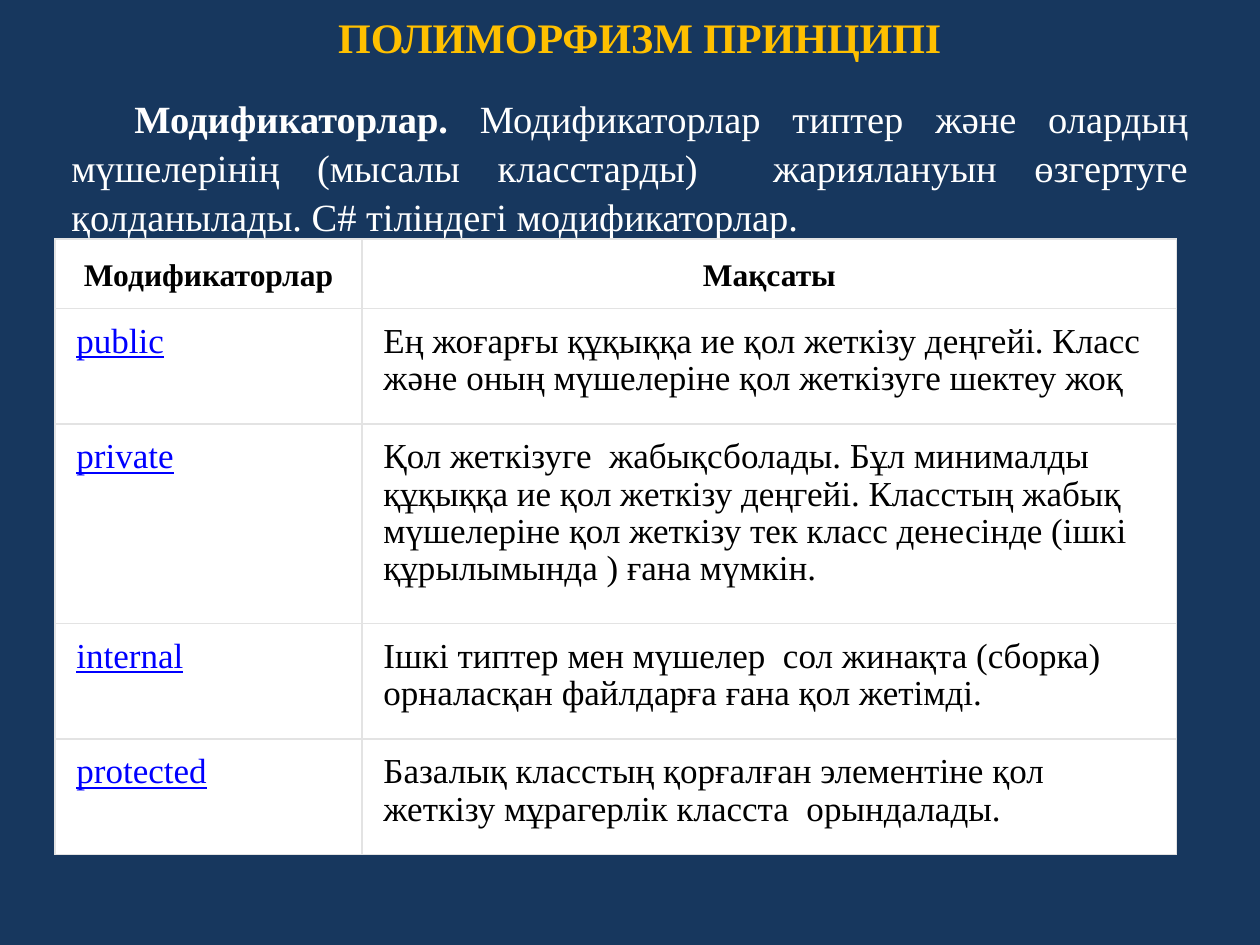
import pptx
import pptx.util
import pptx.dml.color
import pptx.enum.text
import pptx.oxml
import lxml.etree
from dataclasses import dataclass

Cm, Pt = pptx.util.Cm, pptx.util.Pt
ALIGN = pptx.enum.text.PP_ALIGN
ANCHOR = pptx.enum.text.MSO_ANCHOR


@dataclass(frozen=True)
class Theme:
    font: str = "Times New Roman"
    background: str = "17375E"
    title: str = "FFC000"
    light: str = "FFFFFF"
    dark: str = "000000"
    keyword: str = "0000FF"
    border: str = "E3E3E3"
    title_size: float = 24
    intro_size: float = 22
    header_size: float = 18
    cell_size: float = 20


THEME = Theme()


def rgb(value):
    return pptx.dml.color.RGBColor.from_string(value)


def add_text(paragraph, text, *, size, color, bold=False, underline=False,
             align=ALIGN.LEFT, spacing=None):
    paragraph.alignment = align
    if spacing:
        paragraph.line_spacing = spacing
    run = paragraph.add_run()
    run.text = text
    font = run.font
    font.name, font.size = THEME.font, Pt(size)
    font.bold, font.underline = bold, underline
    font.color.rgb = rgb(color)


class SlideBuilder:
    def __init__(self, slide, theme):
        self.slide, self.theme = slide, theme
        fill = slide.background.fill
        fill.solid()
        fill.fore_color.rgb = rgb(theme.background)

    def text_box(self, left, top, width, height, anchor=ANCHOR.TOP):
        box = self.slide.shapes.add_textbox(Cm(left), Cm(top), Cm(width), Cm(height))
        frame = box.text_frame
        frame.word_wrap = True
        frame.vertical_anchor = anchor
        return frame.paragraphs[0]

    def borders(self, cell):
        properties = cell._tc.get_or_add_tcPr()
        sides = ("lnL", "lnR", "lnT", "lnB")
        for position, side in enumerate(sides):
            line = pptx.oxml.parse_xml(
                f'<a:{side} xmlns:a="http://schemas.openxmlformats.org/drawingml/2006/main" '
                f'w="{Pt(1)}"><a:solidFill><a:srgbClr val="{self.theme.border}"/>'
                f'</a:solidFill></a:{side}>')
            properties.insert(position, line)

    def cell(self, cell, text, anchor=ANCHOR.TOP, **text_format):
        cell.margin_left = cell.margin_right = Cm(0.43)
        cell.margin_top = cell.margin_bottom = Cm(0.3)
        cell.vertical_anchor = anchor
        cell.fill.solid()
        cell.fill.fore_color.rgb = rgb(self.theme.light)
        self.borders(cell)
        add_text(cell.text_frame.paragraphs[0], text, **text_format)

    def table(self, left, top, widths, heights, header, rows):
        table = self.slide.shapes.add_table(
            len(heights), len(widths), Cm(left), Cm(top),
            Cm(sum(widths)), Cm(sum(heights))).table
        table.horz_banding = False
        for column, width in zip(table.columns, widths):
            column.width = Cm(width)
        for row, height in zip(table.rows, heights):
            row.height = Cm(height)
        for index, heading in enumerate(header):
            self.cell(table.cell(0, index), heading, ANCHOR.BOTTOM, bold=True,
                      size=self.theme.header_size, color=self.theme.dark,
                      align=ALIGN.CENTER)
        body = dict(size=self.theme.cell_size, spacing=0.96)
        for index, (modifier, purpose) in enumerate(rows, start=1):
            self.cell(table.cell(index, 0), modifier, underline=True,
                      color=self.theme.keyword, **body)
            self.cell(table.cell(index, 1), purpose, color=self.theme.dark, **body)


MODIFIERS = [
    ("public", "Ең жоғарғы құқыққа ие қол жеткізу деңгейі. Класс және оның "
               "мүшелеріне қол жеткізуге шектеу жоқ"),
    ("private", "Қол жеткізуге  жабықсболады. Бұл минималды құқыққа ие қол жеткізу "
                "деңгейі. Класстың жабық мүшелеріне қол жеткізу тек класс денесінде "
                "(ішкі құрылымында ) ғана мүмкін."),
    ("internal", "Ішкі типтер мен мүшелер  сол жинақта (сборка) орналасқан "
                 "файлдарға ғана қол жетімді."),
    ("protected", "Базалық класстың қорғалған элементіне қол жеткізу мұрагерлік "
                  "класста  орындалады."),
]


def main():
    presentation = pptx.Presentation()
    presentation.slide_width, presentation.slide_height = Cm(25.4), Cm(19.05)
    slide = presentation.slides.add_slide(presentation.slide_layouts[6])
    builder = SlideBuilder(slide, THEME)

    # Introduction
    intro = builder.text_box(1.19, 1.73, 23.01, 3.07)
    intro_format = dict(size=THEME.intro_size, color=THEME.light,
                        align=ALIGN.JUSTIFY, spacing=1.06)
    add_text(intro, "Модификаторлар. ", bold=True, **intro_format)
    add_text(intro, "Модификаторлар типтер және олардың мүшелерінің (мысалы "
             "класстарды)  жариялануын өзгертуге қолданылады. C# тіліндегі "
             "модификаторлар.", **intro_format)
    intro._p.get_or_add_pPr().set("indent", str(Cm(1.27)))

    # Access modifiers
    builder.table(1.11, 4.82, widths=(6.19, 16.42),
                  heights=(1.4, 2.33, 4.02, 2.33, 2.33),
                  header=("Модификаторлар", "Мақсаты"), rows=MODIFIERS)

    # Title
    title = builder.text_box(-0.08, 0.08, 25.96, 1.32, ANCHOR.MIDDLE)
    add_text(title, "ПОЛИМОРФИЗМ ПРИНЦИПІ", size=THEME.title_size,
             color=THEME.title, bold=True, align=ALIGN.CENTER)

    presentation.save("out.pptx")


if __name__ == "__main__":
    main()
